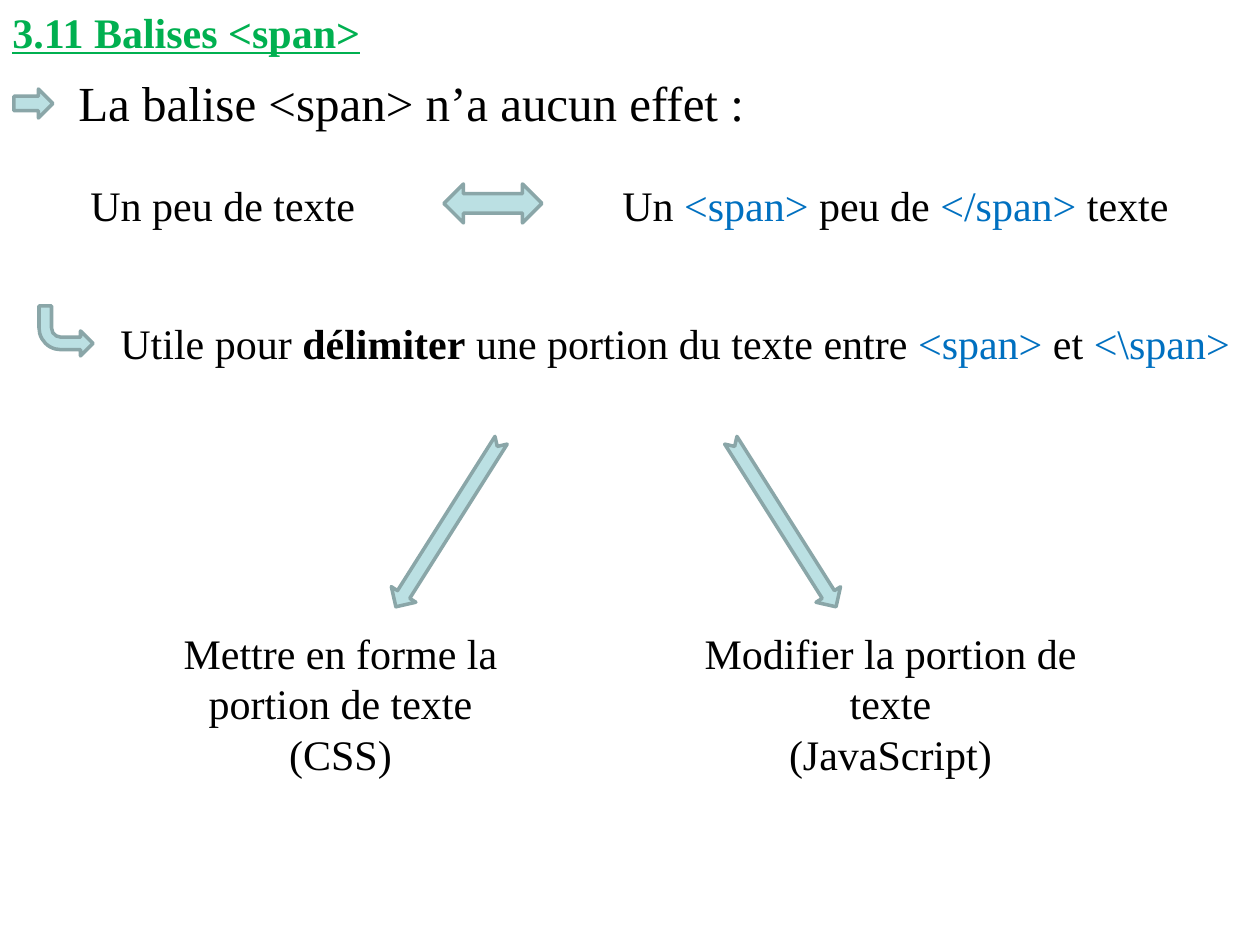
from pptx import Presentation
from pptx.dml.color import RGBColor
from pptx.enum.shapes import MSO_SHAPE
from pptx.enum.text import MSO_ANCHOR, PP_ALIGN
from pptx.oxml.ns import qn
from pptx.util import Pt

SCALE = 914400 / 126
FONT = "Times New Roman"
BLACK, BLUE, GREEN = "000000", "0070C0", "00B050"
FILL, EDGE = "BBE0E3", "8AA6A8"

TITLE = ((0, 0, 1131, 63), "3.11 Balises <span>")
LINES = [
    ((66, 66, 1164, 72), 28, [("La balise <span> n’a aucun effet :", BLACK, False)]),
    ((78, 173, 295, 63), 24, [("Un peu de texte", BLACK, False)]),
    ((610, 173, 610, 63), 24, [
        ("Un ", BLACK, False), ("<span> ", BLUE, False), ("peu de ", BLACK, False),
        ("</span> ", BLUE, False), ("texte", BLACK, False)]),
    ((108, 311, 1142, 63), 24, [
        ("Utile pour ", BLACK, False), ("délimiter", BLACK, True),
        (" une portion du texte entre ", BLACK, False), ("<span> ", BLUE, False),
        ("et ", BLACK, False), ("<\\span>", BLUE, False)]),
]
USES = [
    (129, ["Mettre en forme la portion de texte", "(CSS)"]),
    (679, ["Modifier la portion de texte", "(JavaScript)"]),
]
ARROWS = [
    (MSO_SHAPE.RIGHT_ARROW, (14, 89, 39, 29), 0),
    (MSO_SHAPE.LEFT_RIGHT_ARROW, (444, 184, 98, 39), 0),
    (MSO_SHAPE.NOTCHED_RIGHT_ARROW, (350, 509, 197, 29), 122.3),
    (MSO_SHAPE.NOTCHED_RIGHT_ARROW, (685, 509, 197, 29), 57.7),
]
BEND = (39, 306, 54, 50)


def emu(box):
    """Turn px lengths into EMU."""
    return [round(n * SCALE) for n in box]


def color(code):
    """Return a colour from its hex string."""
    return RGBColor.from_string(code)


def add_text(slide, box, paras, size, align=PP_ALIGN.LEFT, anchor=MSO_ANCHOR.MIDDLE):
    """Add a wrapped text box of paragraphs made of (text, colour, bold) runs."""
    frame = slide.shapes.add_textbox(*emu(box)).text_frame
    frame.word_wrap = True
    frame.vertical_anchor = anchor
    for i, runs in enumerate(paras):
        para = frame.add_paragraph() if i else frame.paragraphs[0]
        para.alignment = align
        para.font.name, para.font.size = FONT, Pt(size)
        for text, code, bold in runs:
            run = para.add_run()
            run.text = text
            run.font.color.rgb = color(code)
            run.font.bold = bold
    return frame


def add_arrow(slide, kind, box, turn=0):
    """Add a filled block arrow."""
    shape = slide.shapes.add_shape(kind, *emu(box))
    shape.rotation = turn
    shape.shadow.inherit = False
    shape.fill.solid()
    shape.fill.fore_color.rgb = color(FILL)
    shape.line.color.rgb = color(EDGE)
    shape.line.width = Pt(2)
    return shape


def main():
    """Build the slide on the span tag."""
    deck = Presentation()
    deck.slide_width, deck.slide_height = emu((1260, 945))
    slide = deck.slides.add_slide(deck.slide_layouts[6])

    box, text = TITLE
    frame = add_text(slide, box, [[(text, GREEN, True)]], 24, anchor=MSO_ANCHOR.TOP)
    frame.paragraphs[0].runs[0].font.underline = True
    for box, size, runs in LINES:
        add_text(slide, box, [runs], size)
    for left, texts in USES:
        paras = [[(text, BLACK, False)] for text in texts]
        add_text(slide, (left, 621, 423, 164), paras, 24, PP_ALIGN.CENTER)

    for kind, box, turn in ARROWS:
        add_arrow(slide, kind, box, turn)
    bend = add_arrow(slide, MSO_SHAPE.BENT_ARROW, BEND)
    bend.element.spPr.find(qn("a:xfrm")).set("flipV", "1")

    deck.save("out.pptx")


if __name__ == "__main__":
    main()
